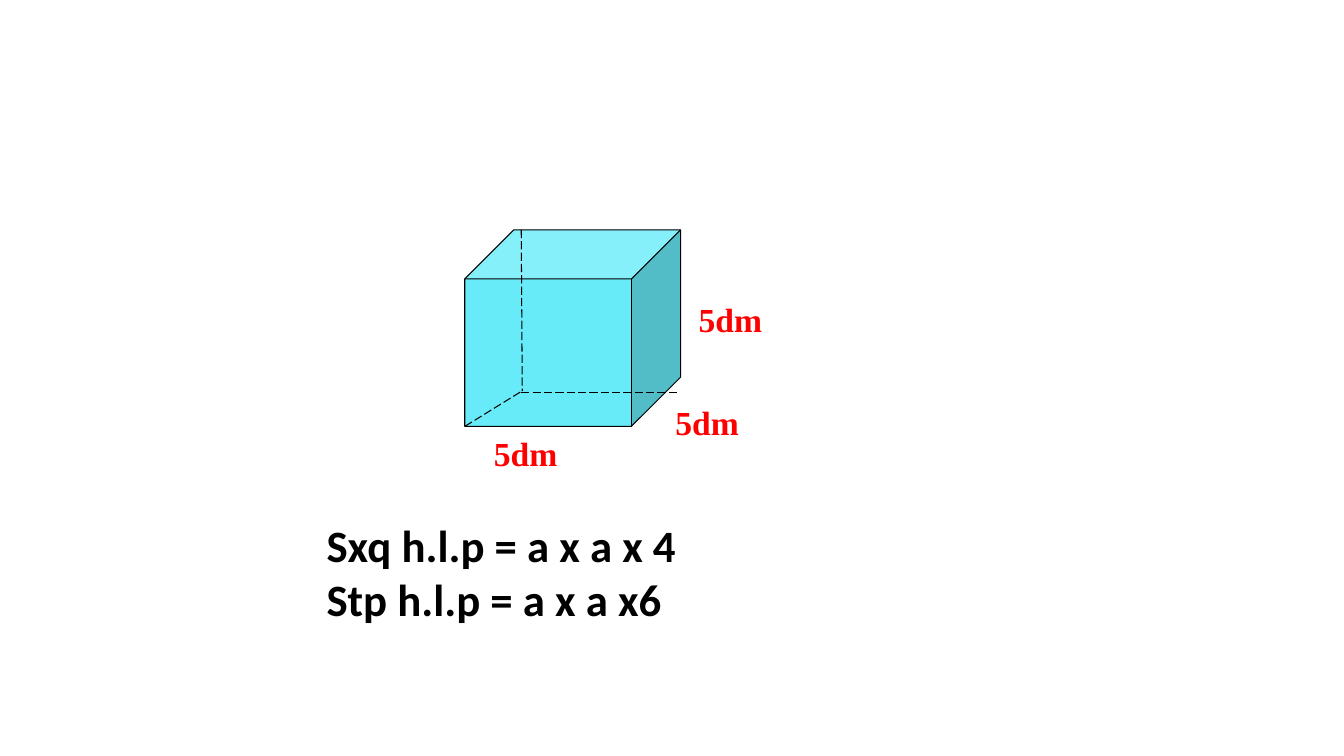
from lxml import etree
from pptx import Presentation
from pptx.dml.color import RGBColor
from pptx.enum.dml import MSO_LINE
from pptx.enum.shapes import MSO_CONNECTOR, MSO_SHAPE
from pptx.enum.text import MSO_AUTO_SIZE
from pptx.oxml.ns import qn
from pptx.util import Inches, Pt

# Content: lengths in inches
COLORS = {"cube": "67EBF9", "edge": "000000", "label": "FF0000", "formula": "000000"}
CUBE = (4.61, 2.28, 2.14, 1.95)
HIDDEN_EDGES = [
    ((5.16, 3.89), (4.61, 4.23)),
    ((5.17, 2.28), (5.18, 3.88)),
    ((5.17, 3.89), (6.74, 3.89)),
]
SIDE_LABELS = [
    ("5dm", (6.83, 2.92, 1.6, 0.5)),
    ("5dm", (4.8, 4.25, 1.17, 0.5)),
    ("5dm", (6.6, 3.94, 1.17, 0.5)),
]
FORMULAS = ["Sxq h.l.p = a x a x 4", "Stp h.l.p = a x a x6"]
FORMULA_AREA = (3.14, 5.09, 5.62, 1.18)


def color(name):
    return RGBColor.from_string(COLORS[name])


def style_edge(line):
    line.color.rgb = color("edge")
    line.width = Pt(0.75)


def add_text(slide, lines, area, font_name, size, color_name):
    frame = slide.shapes.add_textbox(*map(Inches, area)).text_frame
    frame.word_wrap = True
    frame.auto_size = MSO_AUTO_SIZE.SHAPE_TO_FIT_TEXT
    frame.text = "\n".join(lines)
    for paragraph in frame.paragraphs:
        font = paragraph.font
        font.name, font.size, font.bold = font_name, Pt(size), True
        font.color.rgb = color(color_name)


def main():
    prs = Presentation()
    prs.slide_width, prs.slide_height = Inches(13.33), Inches(7.5)
    slide = prs.slides.add_slide(prs.slide_layouts[6])

    # Cube with its hidden edges
    cube = slide.shapes.add_shape(MSO_SHAPE.CUBE, *map(Inches, CUBE))
    cube.adjustments[0] = 0.25
    cube.shadow.inherit = False
    cube.fill.solid()
    cube.fill.fore_color.rgb = color("cube")
    style_edge(cube.line)
    for start, end in HIDDEN_EDGES:
        edge = slide.shapes.add_connector(
            MSO_CONNECTOR.STRAIGHT, *map(Inches, start + end))
        style_edge(edge.line)
        edge.line.dash_style = MSO_LINE.LONG_DASH
        etree.SubElement(edge._element.spPr, qn("a:effectLst"))

    # Side lengths
    for label, area in SIDE_LABELS:
        add_text(slide, [label], area, "Times New Roman", 24, "label")

    # Area formulas
    add_text(slide, FORMULAS, FORMULA_AREA, "Calibri", 32, "formula")

    prs.save("out.pptx")


if __name__ == "__main__":
    main()
